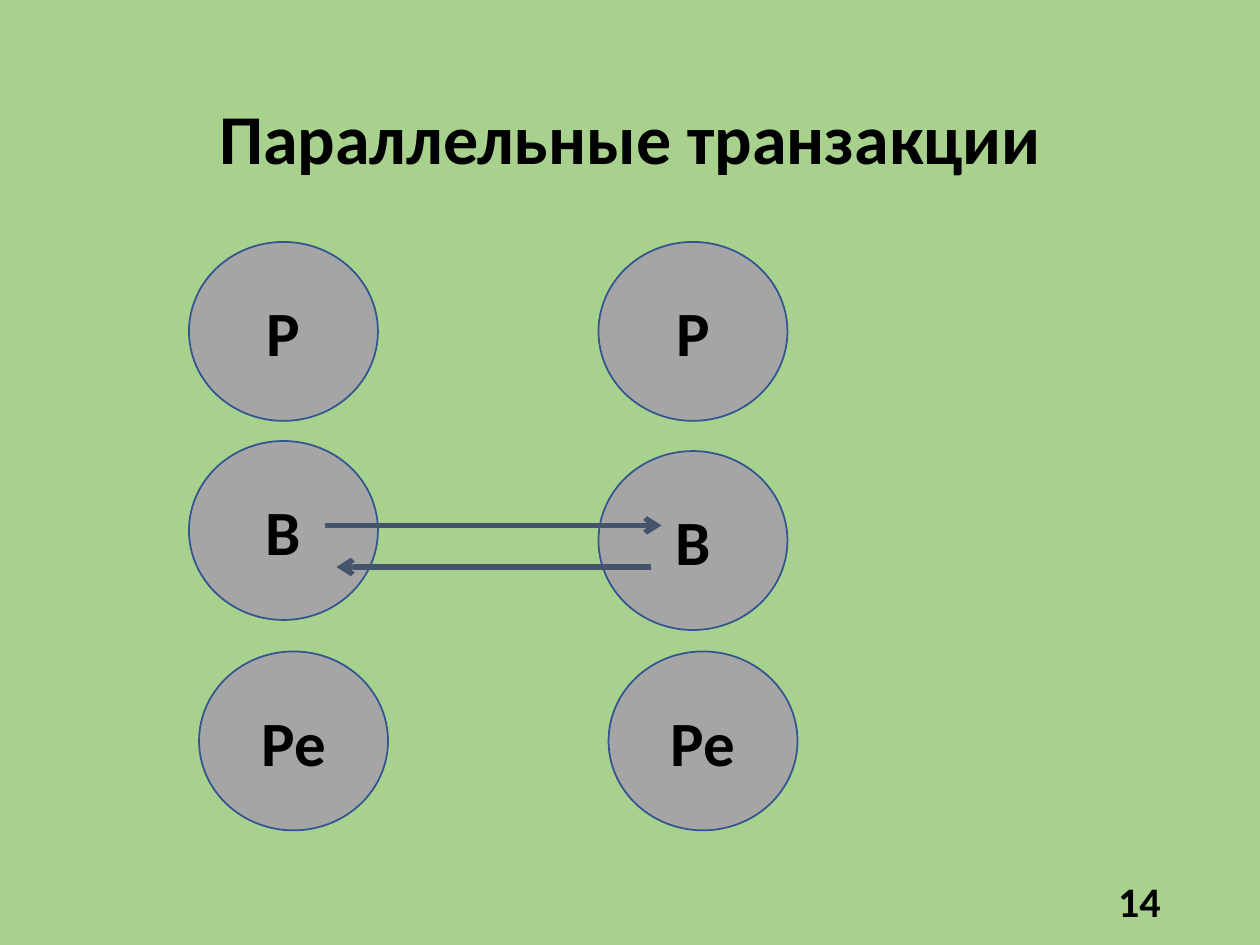
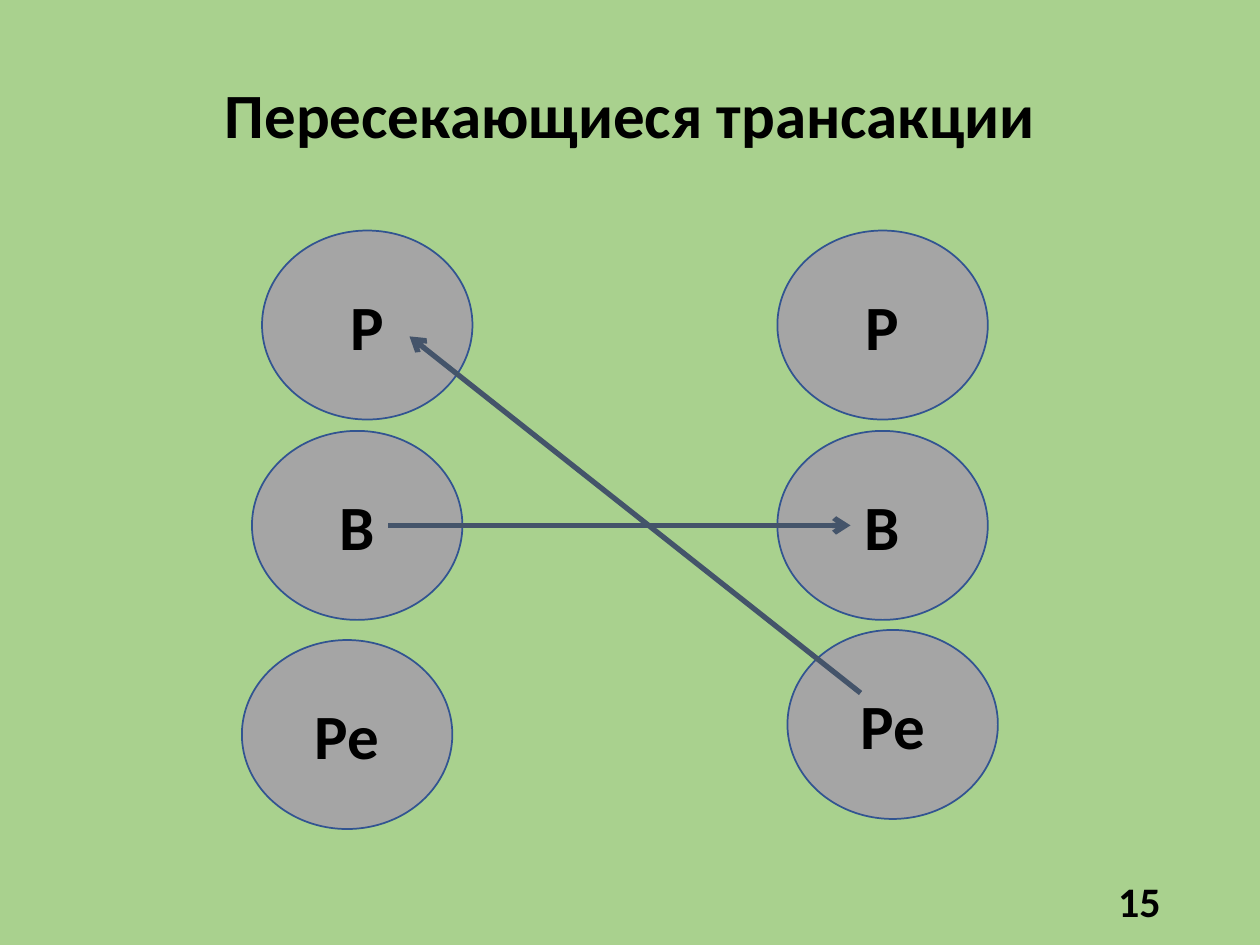
from lxml.etree import SubElement
from pptx import Presentation
from pptx.dml.color import RGBColor
from pptx.enum.shapes import MSO_CONNECTOR, MSO_SHAPE
from pptx.enum.text import MSO_ANCHOR, PP_ALIGN
from pptx.oxml.ns import qn
from pptx.util import Inches, Pt

BACKGROUND = RGBColor(0xA9, 0xD1, 0x8E)
CIRCLE_FILL = RGBColor(0xA5, 0xA5, 0xA5)
CIRCLE_LINE = RGBColor(0x32, 0x54, 0x91)
ARROW_COLOR = RGBColor(0x44, 0x54, 0x6A)
TEXT_COLOR = RGBColor(0, 0, 0)

FONT_FORMAT = {"name": "Calibri", "bold": True}
EGO_STATES = ("Р", "В", "Ре")

# Circle positions run down the left person, then down the right person.
TRANSACTIONS = [
    {
        "title": "Параллельные транзакции",
        "title_height": 1.45,
        "title_size": 40,
        "number": 14,
        "circle_size": (1.5, 1.42),
        "people": [
            [(1.5, 1.92), (1.5, 3.5), (1.58, 5.17)],
            [(4.75, 1.92), (4.75, 3.58), (4.83, 5.17)],
        ],
        "arrows": [((2.58, 4.17), (5.25, 4.17)), ((5.17, 4.5), (2.67, 4.5))],
    },
    {
        "title": "Пересекающиеся трансакции",
        "title_height": 1.07,
        "title_size": 36,
        "number": 15,
        "circle_size": (1.67, 1.5),
        "people": [
            [(2.08, 1.83), (2, 3.42), (1.92, 5.08)],
            [(6.17, 1.83), (6.17, 3.42), (6.25, 5)],
        ],
        "arrows": [((3.08, 4.17), (6.75, 4.17)), ((6.83, 5.5), (3.25, 2.67))],
    },
]


def write_text(shape, text, size, alignment=PP_ALIGN.CENTER, line_spacing=1.0):
    frame = shape.text_frame
    frame.word_wrap = True
    frame.vertical_anchor = MSO_ANCHOR.MIDDLE
    para = frame.paragraphs[0]
    para.alignment = alignment
    para.line_spacing = line_spacing
    span = para.add_run()
    span.text = text
    for name, value in FONT_FORMAT.items():
        setattr(span.font, name, value)
    span.font.size = Pt(size)
    span.font.color.rgb = TEXT_COLOR


def add_title(page, text, height, size):
    box = page.shapes.add_textbox(Inches(0.69), Inches(0.4), Inches(8.62), Inches(height))
    write_text(box, text, size, line_spacing=0.9)


def add_page_number(page, number):
    box = page.shapes.add_textbox(Inches(7.06), Inches(6.95), Inches(2.25), Inches(0.4))
    write_text(box, str(number), 24, PP_ALIGN.RIGHT)


def add_circle(page, label, position, size):
    bounds = [Inches(length) for length in (*position, *size)]
    circle = page.shapes.add_shape(MSO_SHAPE.OVAL, *bounds)
    circle.shadow.inherit = False
    circle.fill.solid()
    circle.fill.fore_color.rgb = CIRCLE_FILL
    circle.line.color.rgb = CIRCLE_LINE
    circle.line.width = Pt(1)
    write_text(circle, label, 36)


def add_arrow(page, start, end):
    points = [Inches(length) for length in (*start, *end)]
    arrow = page.shapes.add_connector(MSO_CONNECTOR.STRAIGHT, *points)
    arrow.line.color.rgb = ARROW_COLOR
    arrow.line.width = Pt(3)
    SubElement(arrow.get_or_add_ln(), qn("a:tailEnd"), type="arrow")
    SubElement(arrow.element.spPr, qn("a:effectLst"))


def add_transaction_page(deck, transaction):
    page = deck.slides.add_slide(deck.slide_layouts[6])
    page.background.fill.solid()
    page.background.fill.fore_color.rgb = BACKGROUND
    add_title(page, transaction["title"], transaction["title_height"], transaction["title_size"])
    add_page_number(page, transaction["number"])
    for positions in transaction["people"]:
        for label, position in zip(EGO_STATES, positions):
            add_circle(page, label, position, transaction["circle_size"])
    for start, end in transaction["arrows"]:
        add_arrow(page, start, end)


def main():
    deck = Presentation()
    deck.slide_width = Inches(10)
    deck.slide_height = Inches(7.5)
    for transaction in TRANSACTIONS:
        add_transaction_page(deck, transaction)
    deck.save("out.pptx")


if __name__ == "__main__":
    main()
